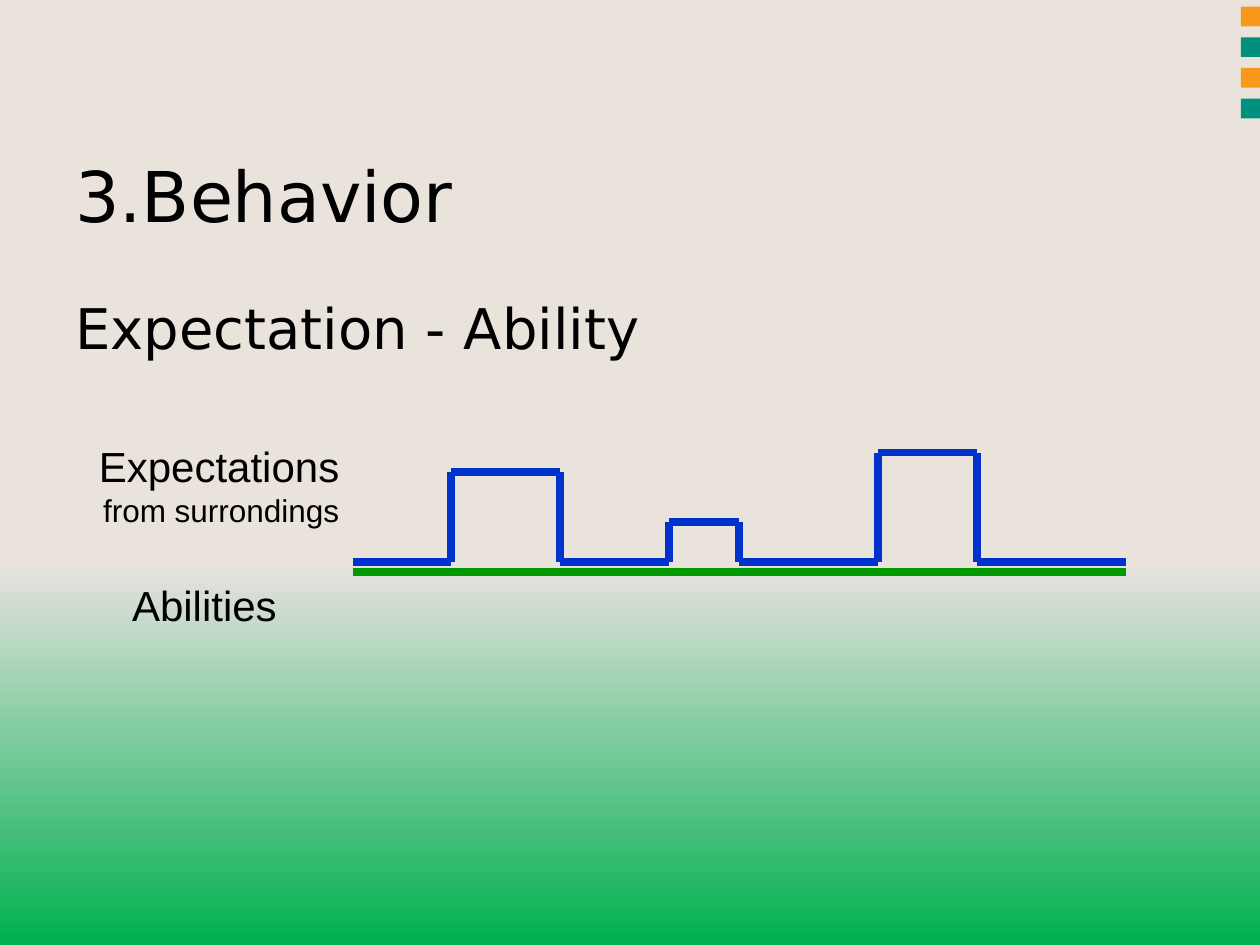
from copy import deepcopy
from itertools import pairwise
from lxml import etree
from pptx import Presentation
from pptx import util as u
from pptx.dml.color import RGBColor
from pptx.enum import shapes, text
from pptx.oxml.ns import qn

HUE = {"sand": "E9E3DC", "mist": "E6E2DE", "leaf": "00B050", "gold": "F8991C",
       "teal": "00907E", "blue": "0033CC", "green": "009900", "black": "000000"}
STOPS = [(0, "sand"), (0.6, "mist"), (1, "leaf")]
TABS = ["gold", "teal", "gold", "teal"]

# Text boxes: left, top, width, height, top inset, anchor, align, runs
MID, TOP = text.MSO_ANCHOR.MIDDLE, text.MSO_ANCHOR.TOP
LEFT, RIGHT = text.PP_ALIGN.LEFT, text.PP_ALIGN.RIGHT
TEXTS = [
    (36, 71.3, 648, 79.2, 3.6, MID, LEFT, [("3.Behavior", 40, "DejaVu Sans")]),
    (36, 122.4, 648, 363.6, 45.4, TOP, LEFT,
     [("Expectation - Ability", 32, "DejaVu Sans")]),
    (31, 246.2, 170, 58.3, 5.6, TOP, RIGHT,
     [("Expectations", 24, "Arial"), (" ", 20, "Arial"),
      ("from surrondings", 18, "Arial")]),
    (68.4, 325.4, 160.6, 36, 5.6, TOP, LEFT, [("Abilities", 24, "Arial")]),
]

# Expectation curve: left, right and top of each bump above the base
START, END, BASE, FLOOR = 201.5, 643.5, 321, 326.9
BUMPS = [(257.8, 320.2, 269.9), (382.5, 422.4, 298.2), (501.7, 558.5, 258.6)]


def rgb(name):
    return RGBColor.from_string(HUE[name])


def block(x, y, w, h, hue):
    box = slide.shapes.add_shape(shapes.MSO_SHAPE.RECTANGLE,
                                 u.Pt(x), u.Pt(y), u.Pt(w), u.Pt(h))
    box.shadow.inherit = False
    box.fill.solid()
    box.fill.fore_color.rgb = rgb(hue)
    box.line.fill.background()


def label(x, y, w, h, inset, anchor, align, runs):
    frame = slide.shapes.add_textbox(u.Pt(x), u.Pt(y), u.Pt(w), u.Pt(h)).text_frame
    frame.word_wrap = True
    frame.margin_top = u.Pt(inset)
    frame.vertical_anchor = anchor
    para = frame.paragraphs[0]
    para.alignment = align
    for words, size, face in runs:
        run = para.add_run()
        run.text = words
        run.font.size = u.Pt(size)
        run.font.name = face
        run.font.color.rgb = rgb("black")


def stroke(start, end, hue):
    line = slide.shapes.add_connector(shapes.MSO_CONNECTOR.STRAIGHT,
                                      *(u.Pt(n) for n in start + end))
    line.line.color.rgb = rgb(hue)
    line.line.width = u.Pt(4.5)
    etree.SubElement(line._element.spPr, qn("a:effectLst"))


deck = Presentation()
deck.slide_width, deck.slide_height = u.Pt(720), u.Pt(540)
slide = deck.slides.add_slide(deck.slide_layouts[6])

# Background gradient, top to bottom
fill = slide.background.fill
fill.gradient()
fill.gradient_angle = 270
stops = slide.background._cSld.find(".//" + qn("a:gsLst"))
stops.append(deepcopy(stops[-1]))
for stop, (pos, hue) in zip(fill.gradient_stops, STOPS):
    stop.position = pos
    stop.color.rgb = rgb(hue)

# Top band and corner tabs
block(0, 0, 720, 71.3, "sand")
for i, hue in enumerate(TABS):
    block(709, 3.8 + 17.5 * i, 11.3, 11.3, hue)

# Text
for item in TEXTS:
    label(*item)

# Expectation curve over the line of abilities
curve = [(START, BASE)]
for left, right, top in BUMPS:
    curve += [(left, BASE), (left, top), (right, top), (right, BASE)]
curve.append((END, BASE))
for start, end in pairwise(curve):
    stroke(start, end, "blue")
stroke((START, FLOOR), (END, FLOOR), "green")

deck.save("out.pptx")
